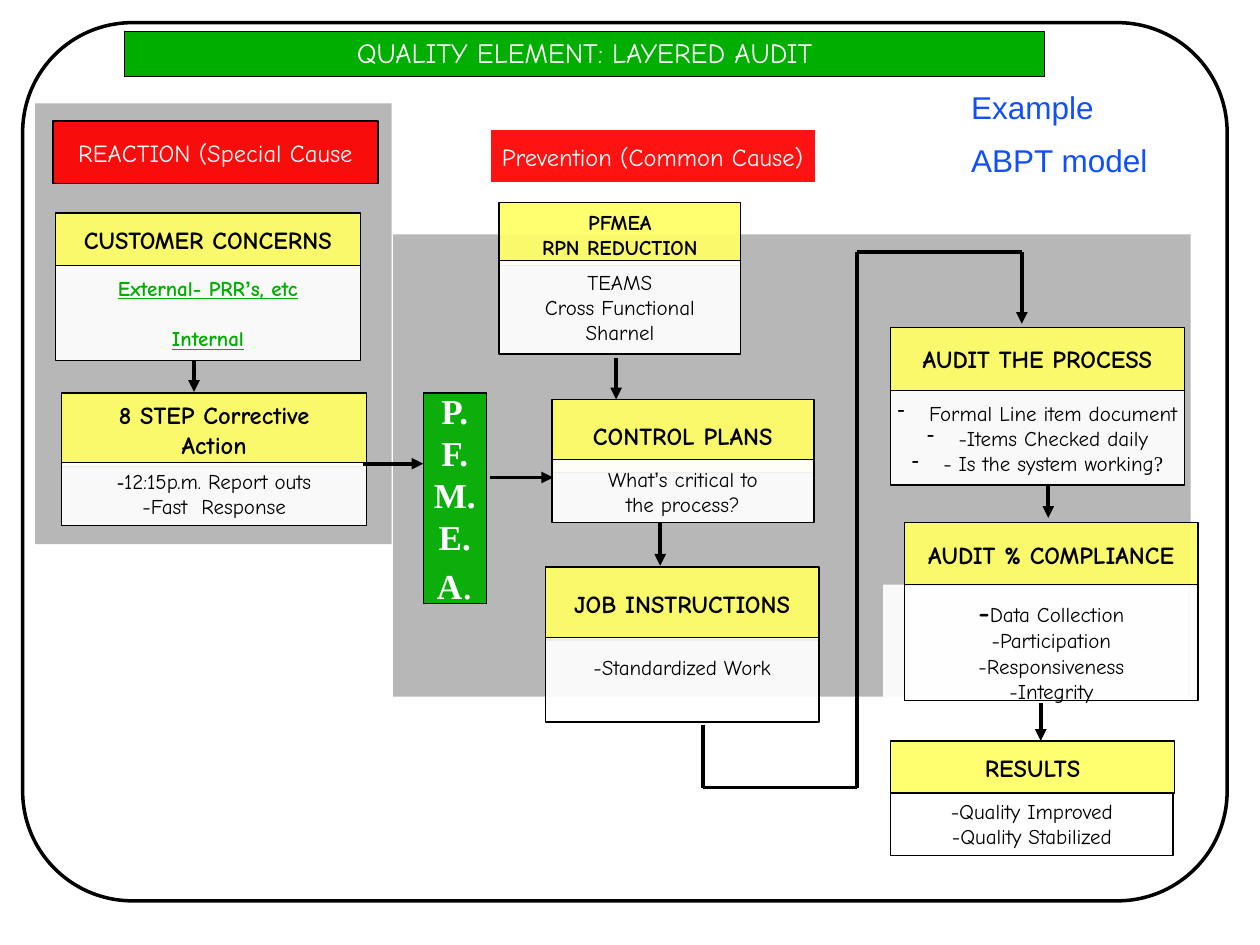
from itertools import pairwise
from lxml.etree import SubElement
from pptx import Presentation
from pptx.dml.color import RGBColor
from pptx.enum.shapes import MSO_CONNECTOR as Connector, MSO_SHAPE as Shape
from pptx.enum.text import MSO_ANCHOR as Anchor, PP_ALIGN as Align
from pptx.oxml.ns import qn
from pptx.util import Inches, Pt

COLORS = {
    "black": "000000", "white": "FFFFFF", "gray": "B2B2B2", "green": "00AE00",
    "red": "FF0000", "yellow": "FFFF66", "blue": "114FFB",
}
COMIC, TIMES, ARIAL = "Comic Neue", "Times New Roman", "Arial"


def write(shape, lines, size, color="black", bold=False, font=COMIC, underline=None, align=Align.CENTER):
    frame = shape.text_frame
    frame.word_wrap = False
    frame.vertical_anchor = Anchor.MIDDLE
    for index, line in enumerate(lines):
        para = frame.paragraphs[0] if index == 0 else frame.add_paragraph()
        para.alignment = align
        for span in [(line, {})] if isinstance(line, str) else line:
            text, changes = span
            run = para.add_run()
            run.text = text
            run.font.name = changes.get("font", font)
            run.font.size = Pt(changes.get("size", size))
            run.font.bold = changes.get("bold", bold)
            run.font.underline = underline
            run.font.color.rgb = RGBColor.from_string(COLORS[color])
    return frame


def add_box(place, fill=None, line="black", kind=Shape.RECTANGLE, weight=0.75):
    box = page.shapes.add_shape(kind, *map(Inches, place))
    box.shadow.inherit = False
    if fill:
        box.fill.solid()
        box.fill.fore_color.rgb = RGBColor.from_string(COLORS[fill])
        tint = box.fill._xPr.find(qn("a:solidFill"))[0]
        SubElement(tint, qn("a:alpha"), val="93000")
    else:
        box.fill.background()
    if line:
        box.line.color.rgb = RGBColor.from_string(COLORS[line])
        box.line.width = Pt(weight)
    else:
        box.line.fill.background()
    return box


deck = Presentation()
deck.slide_width, deck.slide_height = Inches(10), Inches(7.5)
page = deck.slides.add_slide(deck.slide_layouts[5])

title = page.shapes.title
title.left, title.top, title.width, title.height = map(Inches, (0.99, 0.25, 7.3, 0.36))
title.fill.solid()
title.fill.fore_color.rgb = RGBColor.from_string(COLORS["green"])
title.line.color.rgb = RGBColor.from_string(COLORS["black"])
title.line.width = Pt(0.75)
write(title, ["QUALITY ELEMENT: LAYERED AUDIT"], 16, "white").paragraphs[0].line_spacing = 0.9

border = add_box((0.18, 0.18, 9.56, 6.97), kind=Shape.ROUNDED_RECTANGLE, weight=2)
border.adjustments[0] = 0.125
add_box((3.12, 1.86, 6.33, 3.67), "gray", None)
add_box((0.28, 0.82, 2.83, 3.5), "gray", None)
add_box((7.01, 4.64, 2.42, 2.17), "white", None)

for place, outline, text in [
    ((0.42, 0.96, 2.58, 0.5), "black", "REACTION (Special Cause"),
    ((3.89, 1.03, 2.58, 0.42), "white", "Prevention (Common Cause)"),
]:
    write(add_box(place, "red", outline), [text], 14, "white")

for place, lines, size in [
    ((0.44, 1.69, 2.42, 0.42), ["CUSTOMER CONCERNS"], 14),
    ((0.49, 3.12, 2.42, 0.58), ["8 STEP Corrective", "Action"], 14),
    ((4.38, 3.17, 2.08, 0.58), ["CONTROL PLANS"], 14),
    ((3.96, 1.61, 1.92, 0.5), ["PFMEA", "RPN REDUCTION"], 12),
    ((4.33, 4.5, 2.17, 0.58), ["JOB INSTRUCTIONS"], 14),
    ((7.07, 2.6, 2.33, 0.5), ["AUDIT THE PROCESS"], 14),
    ((7.18, 4.15, 2.33, 0.5), ["AUDIT % COMPLIANCE"], 14),
    ((7.07, 5.88, 2.25, 0.42), ["RESULTS"], 14),
]:
    write(add_box(place, "yellow"), lines, size, bold=True)

for place, lines in [
    ((0.49, 3.67, 2.42, 0.5),
     [[("-", {"font": TIMES}), ("12:15p.m. Report outs", {})], "-Fast  Response"]),
    ((4.38, 3.65, 2.08, 0.5),
     [[("What", {}), ("’", {"font": ARIAL}), ("s critical to", {})], "the process?"]),
    ((3.96, 2.07, 1.92, 0.74), ["TEAMS", "Cross Functional", "Sharnel"]),
]:
    write(add_box(place, "white"), lines, 12)

concerns = write(
    add_box((0.44, 2.11, 2.42, 0.75), "white"),
    [[("External- PRR", {}), ("’", {"font": ARIAL}), ("s, etc", {})], "Internal"],
    12, "green", bold=True, underline=True)
concerns.paragraphs[1].space_before = Pt(14.4)

instructions = write(add_box((4.33, 5.06, 2.17, 0.67), "white"), ["-Standardized Work"], 12)
instructions.margin_bottom = Inches(0.25)

checks = write(
    add_box((7.07, 3.1, 2.33, 0.75), "white"),
    ["Formal Line item document", "-Items Checked daily",
     [("- Is the system working", {}), ("?", {"font": TIMES})]], 12)
for para in checks.paragraphs:
    properties = para._p.get_or_add_pPr()
    properties.set("marL", str(Inches(0.25)))
    properties.set("indent", str(-Inches(0.25)))
    SubElement(properties, qn("a:buChar"), char="-")

compliance = write(
    add_box((7.18, 4.64, 2.33, 0.92), "white"),
    [[("-", {"size": 16, "bold": True}), ("Data Collection", {})],
     "-Participation", "-Responsiveness", "-Integrity"], 12)
compliance.margin_top = Inches(0.15)

write(add_box((7.07, 6.29, 2.24, 0.5)), ["-Quality Improved", "-Quality Stabilized"], 12)

write(add_box((3.36, 3.12, 0.5, 1.67), "green"),
      ["P.", "F.", "M.", "E.", [("A", {}), (".", {"size": 24, "bold": False})]],
      20, "white", bold=True, font=TIMES)

note = page.shapes.add_textbox(*map(Inches, (7.61, 0.67, 1.67, 0.82)))
note_frame = write(note, ["Example", "ABPT model"], 18, "blue", font=ARIAL, align=Align.LEFT)
note_frame.vertical_anchor = Anchor.TOP
for para in note_frame.paragraphs:
    para.line_spacing = 0.95
note_frame.paragraphs[1].space_before = Pt(10)

for route in [
    [(1.54, 2.86), (1.54, 3.11)],
    [(4.89, 2.84), (4.89, 3.17)],
    [(5.24, 4.15), (5.24, 4.49)],
    [(5.58, 5.75), (5.58, 6.25), (6.8, 6.25), (6.8, 2), (8.11, 2), (8.11, 2.57)],
    [(8.32, 3.86), (8.32, 4.11)],
    [(8.26, 5.58), (8.26, 5.88)],
    [(3.89, 3.79), (4.39, 3.79)],
    [(2.88, 3.68), (3.36, 3.68)],
]:
    for start, end in pairwise(route):
        link = page.shapes.add_connector(Connector.STRAIGHT, *map(Inches, start + end))
        link.line.color.rgb = RGBColor.from_string(COLORS["black"])
        link.line.width = Pt(2.25)
        if end == route[-1]:
            SubElement(link.line._get_or_add_ln(), qn("a:tailEnd"), type="triangle")
        SubElement(link._element.spPr, qn("a:effectLst"))

deck.save("out.pptx")
